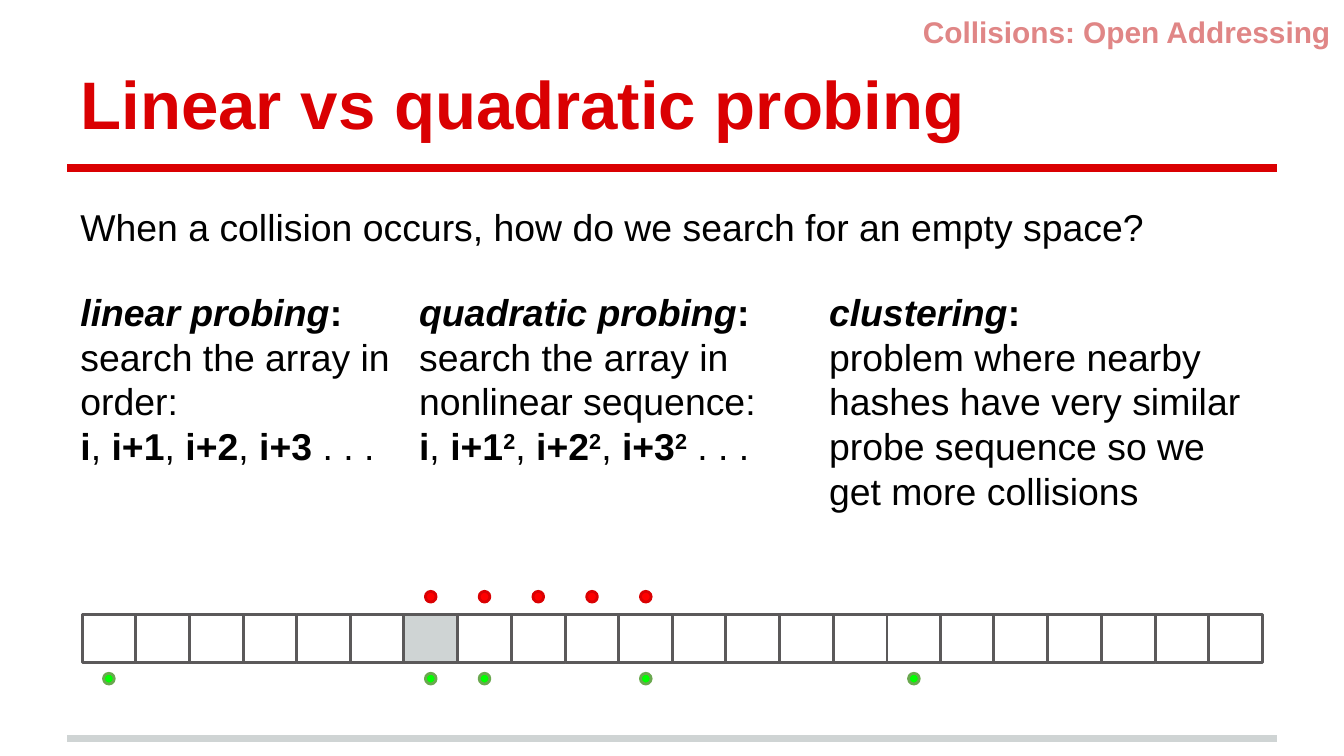
from lxml import etree
from pptx import Presentation
from pptx.dml.color import RGBColor
from pptx.enum.shapes import MSO_CONNECTOR as Connector, MSO_SHAPE as Shape
from pptx.enum.text import MSO_ANCHOR as Anchor, MSO_AUTO_SIZE as AutoSize, PP_ALIGN as Align
from pptx.oxml.ns import qn
from pptx.util import Pt

PX = 4572  # EMU in one px, 200 px to the inch
FONT = "Arial"
RED, PALE_RED, GREY, DARK_GREY = "DA0002", "E08686", "CFD4D4", "5B595A"
BLACK, WHITE = "000000", "FFFFFF"

# Array of cells
ARRAY_LEFT, ARRAY_TOP, ARRAY_WIDTH, CELL_HEIGHT = 123, 915, 1756, 71
CELLS, HASHED_CELL = 22, 6
DOT = 16

# Run styles: b bold, i italic, ^ superscript
COLUMNS = [
    (100, 504, 306, [
        [("linear probing", "bi"), (":", "b")],
        [("search the array in order:", "")],
        [("i", "b"), (", ", ""), ("i+1", "b"), (", ", ""), ("i+2", "b"),
         (", ", ""), ("i+3", "b"), (" . . .", "")],
    ]),
    (604, 564, 306, [
        [("quadratic probing", "bi"), (":", "b"),
         (" search the array in nonlinear sequence:", "")],
        [("i", "b"), (", ", ""), ("i+1", "b"), ("2", "b^"), (", ", ""),
         ("i+2", "b"), ("2", "b^"), (", ", ""), ("i+3", "b"), ("2", "b^"),
         (" . . .", "")],
    ]),
    (1214, 684, 348, [
        [("clustering", "bi"), (":", "b")],
        [("problem where nearby hashes have very similar probe sequence "
          "so we get more collisions", "")],
    ]),
]


def px(length):
    return length * PX


def colour(value):
    return RGBColor.from_string(value)


def write(box, paragraphs, size, ink, align=Align.LEFT, anchor=Anchor.TOP, spacing=None):
    frame = box.text_frame
    frame.word_wrap = True
    frame.auto_size = AutoSize.NONE
    frame.vertical_anchor = anchor
    frame.margin_left = frame.margin_right = px(20)
    frame.margin_top = frame.margin_bottom = px(20)
    for number, runs in enumerate(paragraphs):
        para = frame.add_paragraph() if number else frame.paragraphs[0]
        para.alignment = align
        para.line_spacing = spacing
        for text, style in runs:
            span = para.add_run()
            span.text = text
            span.font.name = FONT
            span.font.size = Pt(size)
            span.font.bold = "b" in style
            span.font.italic = "i" in style
            span.font.color.rgb = colour(ink)
            if "^" in style:
                span.font._element.set("baseline", "30000")


def add_text(page, left, top, width, height, paragraphs, size=20, ink=BLACK, **layout):
    box = page.shapes.add_textbox(px(left), px(top), px(width), px(height))
    write(box, paragraphs, size, ink, **layout)


def add_rule(page, top, ink):
    rule = page.shapes.add_connector(Connector.STRAIGHT, px(100), px(top), px(1900), px(top))
    rule.line.color.rgb = colour(ink)
    rule.line.width = Pt(4)
    etree.SubElement(rule._element.spPr, qn("a:effectLst"))


def add_outlined(page, kind, left, top, width, height, fill, outline):
    shape = page.shapes.add_shape(kind, px(left), px(top), px(width), px(height))
    shape.shadow.inherit = False
    shape.fill.solid()
    shape.fill.fore_color.rgb = colour(fill)
    shape.line.color.rgb = colour(outline)
    shape.line.width = Pt(1.5)


def cell_left(index):
    return ARRAY_LEFT + ARRAY_WIDTH * index // CELLS


def add_array(page):
    for index in range(CELLS):
        left, right = cell_left(index), cell_left(index + 1)
        fill = GREY if index == HASHED_CELL else WHITE
        add_outlined(page, Shape.RECTANGLE, left, ARRAY_TOP, right - left,
                     CELL_HEIGHT, fill, DARK_GREY)


def add_probes(page, indexes, top, fill, outline):
    for index in indexes:
        left = (cell_left(index) + cell_left(index + 1) - DOT) // 2
        add_outlined(page, Shape.OVAL, left, top, DOT, DOT, fill, outline)


def main():
    deck = Presentation()
    deck.slide_width, deck.slide_height = px(2000), px(1125)
    page = deck.slides.add_slide(deck.slide_layouts[5])

    # Title and rules
    title = page.shapes.title
    title.left, title.top, title.width, title.height = px(100), px(45), px(1876), px(188)
    write(title, [[("Linear vs quadratic probing", "b")]], 36, RED, anchor=Anchor.BOTTOM)
    add_rule(page, 1099, GREY)
    add_rule(page, 250, RED)

    # Section label
    add_text(page, 1306, 0, 694, 80, [[("Collisions: Open Addressing", "b")]],
             16, PALE_RED, align=Align.RIGHT)

    # Question and definitions
    question = "When a collision occurs, how do we search for an empty space?"
    add_text(page, 100, 284, 1682, 110, [[(question, "")]], spacing=Pt(24))
    for left, width, height, paragraphs in COLUMNS:
        add_text(page, left, 410, width, height, paragraphs, spacing=Pt(24))

    # Array with linear probes above and quadratic probes below
    add_array(page)
    add_probes(page, [HASHED_CELL + step for step in range(5)], 880, "FF0000", RED)
    quadratic = [(HASHED_CELL + step ** 2) % CELLS for step in range(5)]
    add_probes(page, quadratic, 1002, "00FF00", "6AA84F")

    deck.save("out.pptx")


if __name__ == "__main__":
    main()
